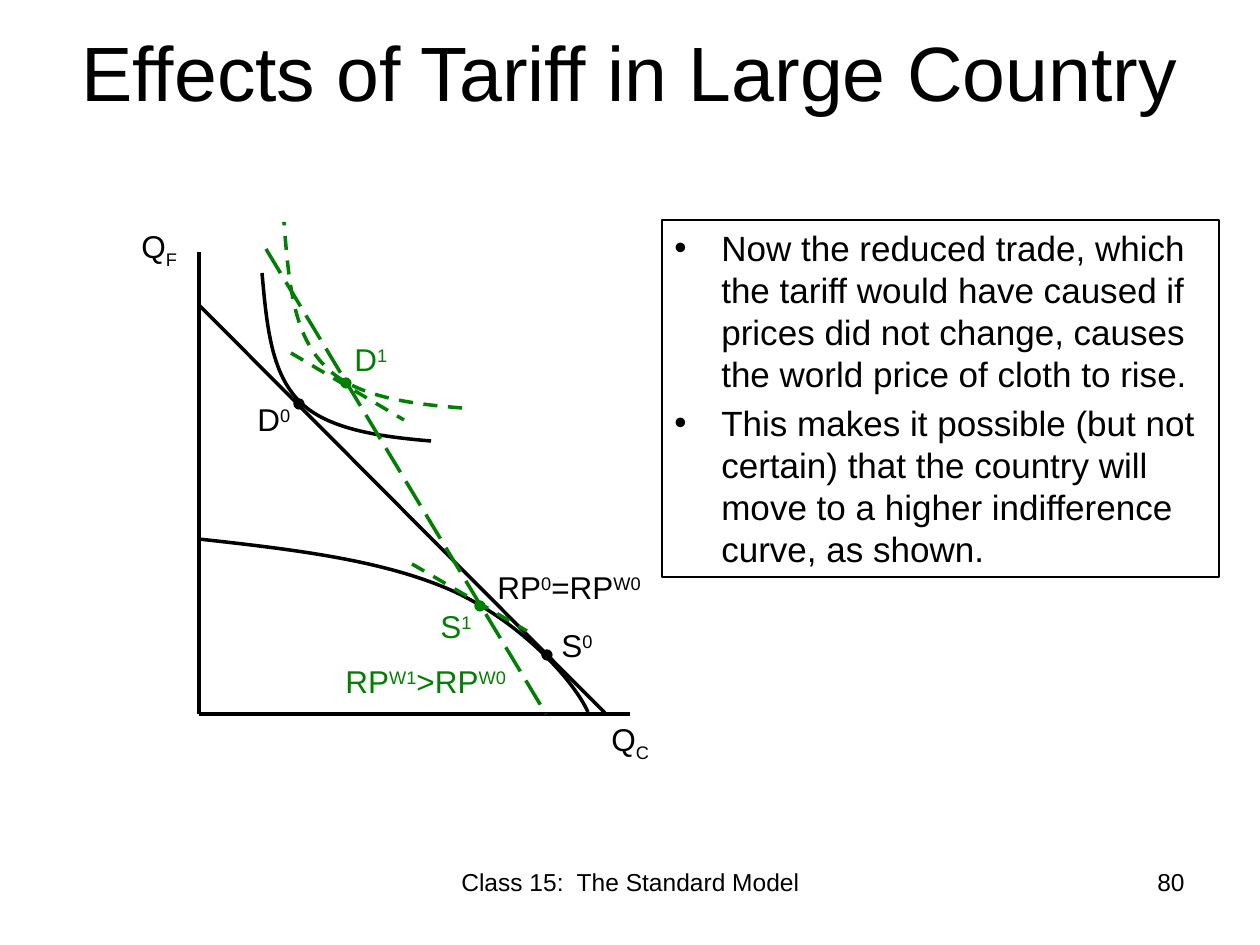
from lxml import etree
from pptx import Presentation, util as u
from pptx.dml.color import RGBColor
from pptx.enum import dml, shapes, text
from pptx.oxml.ns import qn

BLACK, GREEN = "000000", "008000"
DASH = dml.MSO_LINE.DASH
LONG = dml.MSO_LINE.LONG_DASH
SUB, SUP = -25, 30


def px(n):
    return u.Emu(round(n * 914400 / 126))


def rgb(code):
    return RGBColor.from_string(code)


def pen(line, color, width, dash=None):
    line.color.rgb = rgb(color)
    line.width = u.Pt(width)
    if dash:
        line.dash_style = dash


def write(para, words, size=18, color=BLACK, align=text.PP_ALIGN.LEFT):
    """Fill a paragraph from a string or from (string, baseline) pairs."""
    para.alignment = align
    for part, base in [(words, 0)] if isinstance(words, str) else words:
        run = para.add_run()
        run.text = part
        run.font.name, run.font.size = "Arial", u.Pt(size)
        run.font.color.rgb = rgb(color)
        if base:
            run.font._element.set("baseline", str(base * 1000))


def label(slide, box, words, **form):
    frame = slide.shapes.add_textbox(*map(px, box)).text_frame
    frame.word_wrap = True
    write(frame.paragraphs[0], words, **form)


def line(slide, start, end, color=BLACK, dash=None):
    link = slide.shapes.add_connector(
        shapes.MSO_CONNECTOR.STRAIGHT, *map(px, start + end))
    pen(link.line, color, 2, dash)
    etree.SubElement(link._element.spPr, qn("a:effectLst"))


def dot(slide, x, y, color):
    mark = slide.shapes.add_shape(
        shapes.MSO_SHAPE.OVAL, px(x - 5), px(y - 5), px(10), px(10))
    mark.shadow.inherit = False
    mark.fill.solid()
    mark.fill.fore_color.rgb = rgb(color)
    pen(mark.line, color, 0.75)


def curve(slide, pts, color=BLACK, dash=None):
    """Draw joined cubic curves; each one starts where the last ends."""
    build = slide.shapes.build_freeform(*map(px, pts[0]))
    build.add_line_segments([tuple(map(px, p)) for p in pts[1:]], close=False)
    shape = build.convert_to_shape()
    shape.shadow.inherit = False
    shape.fill.background()
    pen(shape.line, color, 2, dash)
    steps = list(shape._element.iter(qn("a:lnTo")))
    for i in range(0, len(steps), 3):
        cubic = etree.Element(qn("a:cubicBezTo"))
        steps[i].addprevious(cubic)
        for step in steps[i:i + 3]:
            cubic.append(step[0])
            step.getparent().remove(step)


def title(slide, box, words):
    """Set the heading on the first of two lines."""
    head = slide.shapes.title
    head.left, head.top, head.width, head.height = map(px, box)
    frame = head.text_frame
    frame.vertical_anchor = text.MSO_ANCHOR.MIDDLE
    para = frame.paragraphs[0]
    write(para, words, size=44, align=text.PP_ALIGN.CENTER)
    para.add_line_break()


def bullets(slide, box, items):
    panel = slide.shapes.add_shape(shapes.MSO_SHAPE.RECTANGLE, *map(px, box))
    panel.shadow.inherit = False
    panel.fill.background()
    pen(panel.line, BLACK, 0.75)
    frame = panel.text_frame
    frame.word_wrap = True
    frame.vertical_anchor = text.MSO_ANCHOR.TOP
    for i, item in enumerate(items):
        para = frame.add_paragraph() if i else frame.paragraphs[0]
        write(para, item, size=20)
        para.space_before = u.Pt(4)
        props = para._p.get_or_add_pPr()
        props.set("marL", str(px(47)))
        props.set("indent", str(-px(47)))
        etree.SubElement(props, qn("a:buFont"), typeface="Arial")
        etree.SubElement(props, qn("a:buChar"), char="•")


def main():
    prs = Presentation()
    prs.slide_width, prs.slide_height = u.Inches(10), u.Inches(7.5)
    slide = prs.slides.add_slide(prs.slide_layouts[5])

    title(slide, (63, 38, 1134, 157), "Effects of Tariff in Large Country")
    bullets(slide, (662, 220, 557, 357), [
        "Now the reduced trade, which the tariff would have caused if prices "
        "did not change, causes the world price of cloth to rise.",
        "This makes it possible (but not certain) that the country will move "
        "to a higher indifference curve, as shown.",
    ])

    origin = (199, 714)
    line(slide, origin, (630, 714))
    line(slide, origin, (199, 252))
    line(slide, (199, 305), (605, 713))
    curve(slide, [(199, 539), (289, 549), (377, 559), (446, 588),
                  (515, 617), (572, 677), (588, 712)])
    curve(slide, [(431, 441), (383, 437), (328, 430), (300, 402),
                  (272, 374), (267, 330), (262, 273)])
    curve(slide, [(462, 408), (411, 404), (353, 397), (324, 365),
                  (294, 334), (289, 286), (284, 222)], GREEN, DASH)
    line(slide, (266, 249), (546, 714), GREEN, LONG)
    for start, end in [((412, 564), (527, 631)), ((291, 353), (404, 420))]:
        line(slide, start, end, GREEN, DASH)

    for x, y, color in [(299, 404, BLACK), (547, 655, BLACK),
                        (480, 606, GREEN), (346, 383, GREEN)]:
        dot(slide, x, y, color)

    for box, words, color in [
        ((599, 714, 94, 89), [("Q", 0), ("C", SUB)], BLACK),
        ((129, 221, 94, 89), [("Q", 0), ("F", SUB)], BLACK),
        ((549, 620, 60, 50), [("S", 0), ("0", SUP)], BLACK),
        ((245, 394, 60, 50), [("D", 0), ("0", SUP)], BLACK),
        ((428, 601, 60, 50), [("S", 0), ("1", SUP)], GREEN),
        ((342, 334, 60, 50), [("D", 0), ("1", SUP)], GREEN),
        ((485, 562, 188, 50),
         [("RP", 0), ("0", SUP), ("=RP", 0), ("W0", SUP)], BLACK),
        ((333, 656, 213, 50),
         [("RP", 0), ("W1", SUP), (">RP", 0), ("W0", SUP)], GREEN),
    ]:
        label(slide, box, words, color=color)

    label(slide, (431, 861, 399, 66), "Class 15:  The Standard Model",
          size=14, align=text.PP_ALIGN.CENTER)
    label(slide, (903, 861, 294, 66), "80", size=14, align=text.PP_ALIGN.RIGHT)
    prs.save("out.pptx")


if __name__ == "__main__":
    main()
